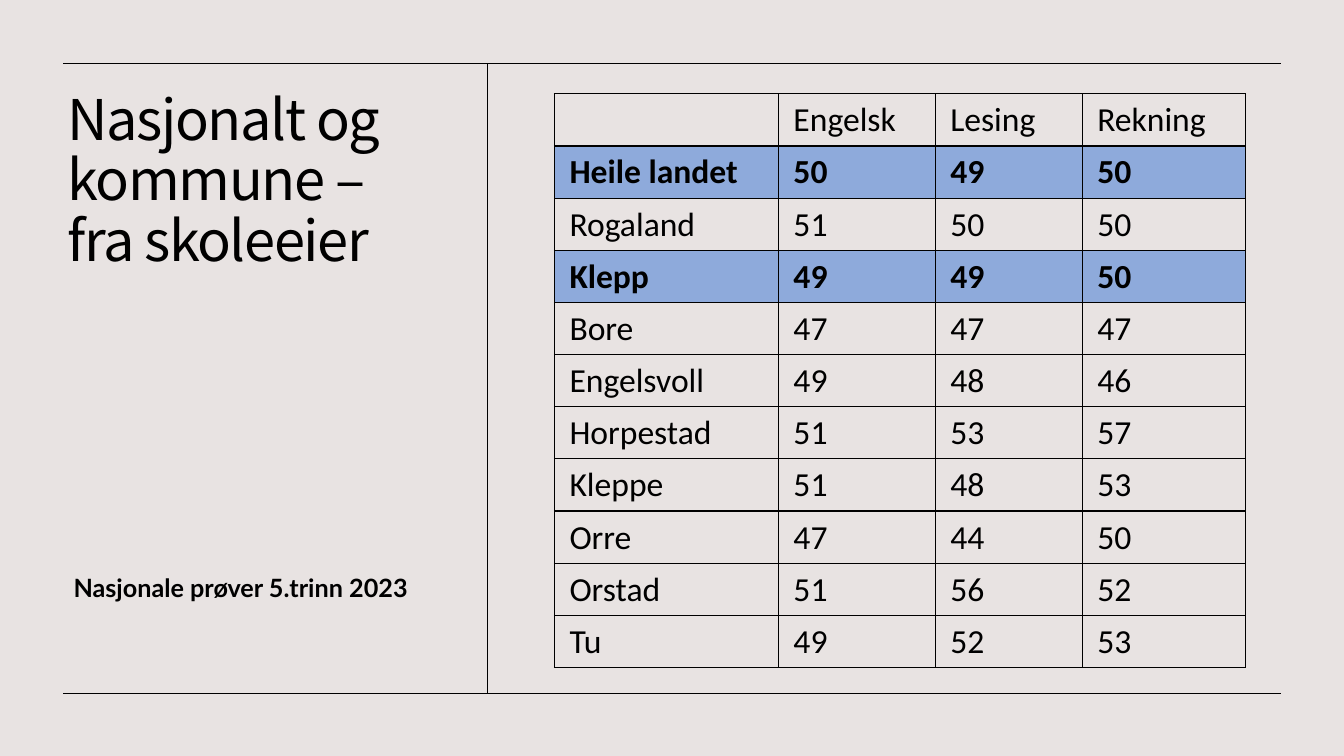
"""Build a slide comparing national test results for fifth grade."""
from dataclasses import dataclass

from lxml import etree
from pptx import Presentation
from pptx import slide as s
from pptx import util as u
from pptx.dml import color
from pptx.enum import shapes, text
from pptx.oxml import ns
from pptx.table import _Cell as Cell
from pptx.text import text as t


@dataclass(frozen=True)
class Theme:
    background: str = "E8E3E2"
    ink: str = "000000"
    highlight: str = "8EAADB"
    title_font: str = "Noto Sans CJK KR"
    caption_font: str = "Lato"
    table_font: str = "Calibri"
    title_size: float = 40
    caption_size: float = 18
    table_size: float = 24
    rule_width: float = 0.5
    border_width: float = 1


@dataclass(frozen=True)
class Rule:
    x1: float
    y1: float
    x2: float
    y2: float


@dataclass(frozen=True)
class Result:
    area: str
    scores: tuple[int, int, int]
    highlighted: bool = False


THEME = Theme()
LEFT, RIGHT, TOP, BOTTOM, DIVIDER = 45, 915, 45.5, 495.5, 348
RULES = [
    Rule(RIGHT, TOP, LEFT, TOP),
    Rule(DIVIDER, TOP, DIVIDER, BOTTOM),
    Rule(RIGHT, BOTTOM, LEFT, BOTTOM),
]
HEADINGS = ("", "Engelsk", "Lesing", "Rekning")
COLUMN_WIDTHS = (160, 112, 105, 116.5)
ROW_HEIGHT = 37.25
RESULTS = [
    Result("Heile landet", (50, 49, 50), True),
    Result("Rogaland", (51, 50, 50)),
    Result("Klepp", (49, 49, 50), True),
    Result("Bore", (47, 47, 47)),
    Result("Engelsvoll", (49, 48, 46)),
    Result("Horpestad", (51, 53, 57)),
    Result("Kleppe", (51, 48, 53)),
    Result("Orre", (47, 44, 50)),
    Result("Orstad", (51, 56, 52)),
    Result("Tu", (49, 52, 53)),
]


def rgb(value: str) -> color.RGBColor:
    return color.RGBColor.from_string(value)


def style(paragraph: t._Paragraph, font: str, size: float, bold: bool = False) -> None:
    paragraph.font.name = font
    paragraph.font.size = u.Pt(size)
    paragraph.font.bold = bold
    paragraph.font.color.rgb = rgb(THEME.ink)


def add_title(slide: s.Slide, wording: str) -> None:
    title = slide.shapes.title
    title.left, title.top = u.Pt(41), u.Pt(62)
    title.width, title.height = u.Pt(276.5), u.Pt(158.5)
    frame = title.text_frame
    frame.text = wording
    frame.word_wrap = True
    frame.auto_size = text.MSO_AUTO_SIZE.NONE
    frame.vertical_anchor = text.MSO_ANCHOR.TOP
    paragraph = frame.paragraphs[0]
    paragraph.alignment = text.PP_ALIGN.LEFT
    paragraph.line_spacing = 0.9
    style(paragraph, THEME.title_font, THEME.title_size)
    for properties in paragraph._p.iter(ns.qn("a:defRPr")):
        properties.set("spc", "-100")


def add_caption(slide: s.Slide, wording: str) -> None:
    box = slide.shapes.add_textbox(u.Pt(45.5), u.Pt(241), u.Pt(258), u.Pt(225))
    frame = box.text_frame
    frame.text = wording
    frame.word_wrap = True
    frame.vertical_anchor = text.MSO_ANCHOR.BOTTOM
    frame.margin_bottom = u.Pt(35.5)
    paragraph = frame.paragraphs[0]
    paragraph.line_spacing = 1.2
    paragraph.space_after = u.Pt(6)
    style(paragraph, THEME.caption_font, THEME.caption_size, True)


def add_rule(slide: s.Slide, rule: Rule) -> None:
    ends = [u.Pt(value) for value in (rule.x1, rule.y1, rule.x2, rule.y2)]
    line = slide.shapes.add_connector(shapes.MSO_CONNECTOR.STRAIGHT, *ends)
    line.line.color.rgb = rgb(THEME.ink)
    line.line.width = u.Pt(THEME.rule_width)
    etree.SubElement(line._element.spPr, ns.qn("a:effectLst"))


def add_borders(cell: Cell) -> None:
    properties = cell._tc.get_or_add_tcPr()
    for side in ("lnL", "lnR", "lnT", "lnB"):
        border = etree.SubElement(properties, ns.qn(f"a:{side}"), w=str(u.Pt(THEME.border_width)))
        fill = etree.SubElement(border, ns.qn("a:solidFill"))
        etree.SubElement(fill, ns.qn("a:srgbClr"), val=THEME.ink)


def fill_cell(cell: Cell, wording: str, highlighted: bool) -> None:
    cell.text = wording
    cell.margin_left = cell.margin_right = u.Pt(10.8)
    cell.margin_top = cell.margin_bottom = 0
    add_borders(cell)
    if highlighted:
        cell.fill.solid()
        cell.fill.fore_color.rgb = rgb(THEME.highlight)
    else:
        cell.fill.background()
    paragraph = cell.text_frame.paragraphs[0]
    paragraph.line_spacing = 1.15
    paragraph.space_before = u.Pt(5)
    paragraph.space_after = u.Pt(10)
    style(paragraph, THEME.table_font, THEME.table_size, highlighted)


def add_results(slide: s.Slide) -> None:
    rows = [(HEADINGS, False)]
    rows += [((result.area, *map(str, result.scores)), result.highlighted) for result in RESULTS]
    table = slide.shapes.add_table(
        len(rows), len(HEADINGS), u.Pt(396), u.Pt(67),
        u.Pt(sum(COLUMN_WIDTHS)), u.Pt(ROW_HEIGHT * len(rows)),
    ).table
    table.first_row = table.horz_banding = False
    for column, width in zip(table.columns, COLUMN_WIDTHS):
        column.width = u.Pt(width)
    for row, (wordings, highlighted) in zip(table.rows, rows):
        row.height = u.Pt(ROW_HEIGHT)
        for cell, wording in zip(row.cells, wordings):
            fill_cell(cell, wording, highlighted)


def main() -> None:
    presentation = Presentation()
    presentation.slide_width, presentation.slide_height = u.Pt(960), u.Pt(540)
    slide = presentation.slides.add_slide(presentation.slide_layouts.get_by_name("Title Only"))
    slide.background.fill.solid()
    slide.background.fill.fore_color.rgb = rgb(THEME.background)
    add_title(slide, "Nasjonalt og kommune – fra skoleeier")
    add_caption(slide, "Nasjonale prøver 5.trinn 2023")
    for rule in RULES:
        add_rule(slide, rule)
    add_results(slide)
    presentation.save("out.pptx")


if __name__ == "__main__":
    main()
